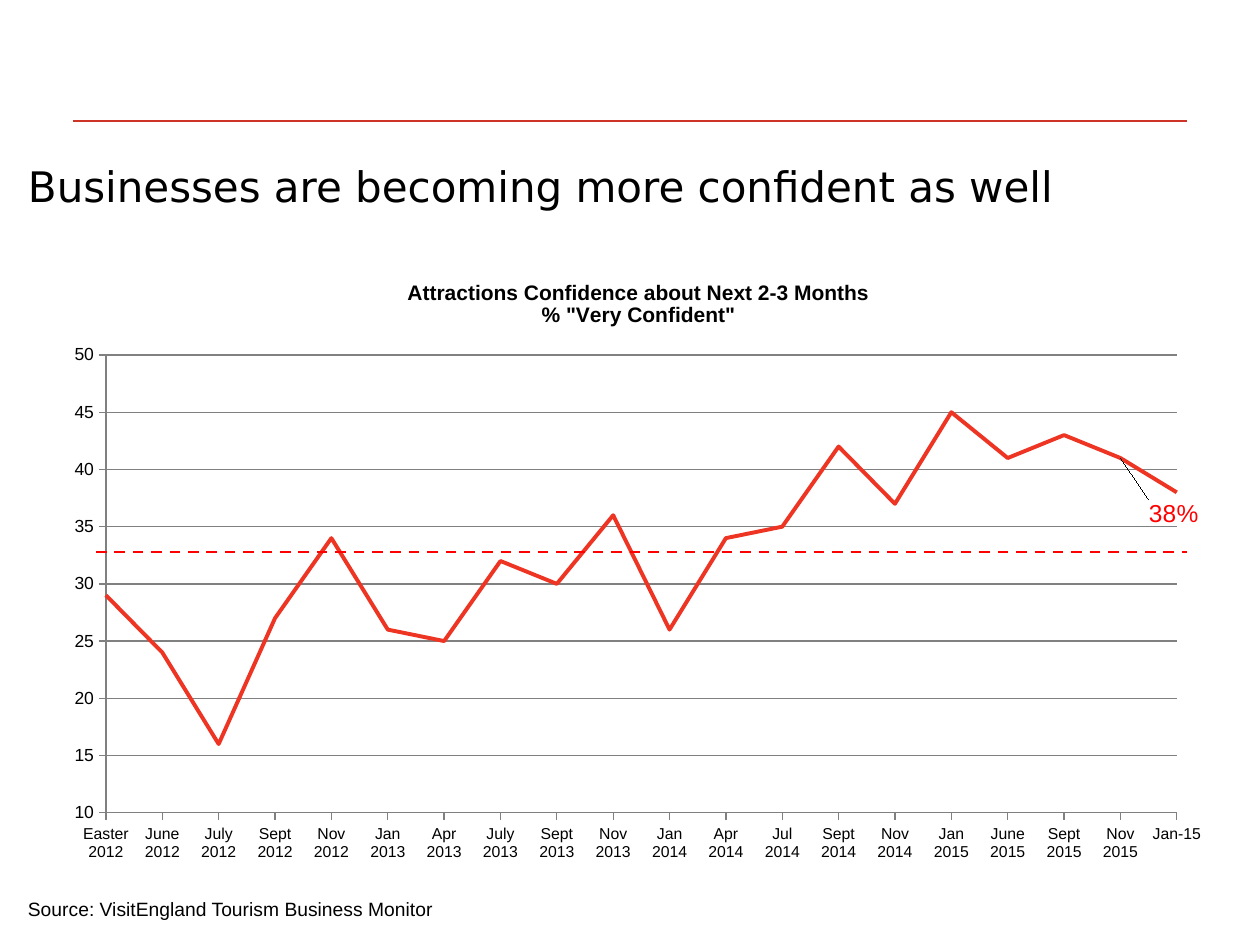
from lxml import etree
from pptx import Presentation, util as u
from pptx.chart.data import CategoryChartData
from pptx.dml.color import RGBColor
from pptx.enum import chart as charts, dml, shapes, text
from pptx.oxml import parse_xml
from pptx.oxml.ns import nsdecls, qn

PX = 914400 / 126
BLACK = RGBColor(0, 0, 0)
RED = RGBColor(0xFF, 0, 0)
SERIES_RED = RGBColor(0xEE, 0x35, 0x24)
RULE_RED = RGBColor(0xCD, 0x34, 0x25)
GREY = RGBColor(0x80, 0x80, 0x80)

CONFIDENCE = {
    "Easter 2012": 29, "June 2012": 24, "July 2012": 16, "Sept 2012": 27,
    "Nov 2012": 34, "Jan 2013": 26, "Apr 2013": 25, "July 2013": 32,
    "Sept 2013": 30, "Nov 2013": 36, "Jan 2014": 26, "Apr 2014": 34,
    "Jul 2014": 35, "Sept 2014": 42, "Nov 2014": 37, "Jan 2015": 45,
    "June 2015": 41, "Sept 2015": 43, "Nov 2015": 41, "Jan-15": 38,
}
LEADER_LINES = (
    f'<c:extLst {nsdecls("c")}><c:ext uri="{{CE6537A1-D6FC-4f65-9D91-7224C49458BB}}" '
    'xmlns:c15="http://schemas.microsoft.com/office/drawing/2012/chart">'
    '<c15:showLeaderLines val="1"/></c:ext></c:extLst>'
)


def px(*lengths):
    return [u.Emu(round(length * PX)) for length in lengths]


def set_font(font, size, color=BLACK, bold=False, name="Arial"):
    font.name, font.size, font.bold = name, u.Pt(size), bold
    font.color.rgb = color


def add_line(slide, left, right, y, color, width, dash=None):
    line = slide.shapes.add_connector(
        shapes.MSO_CONNECTOR.STRAIGHT, *px(left, y, right, y))
    line.line.color.rgb = color
    line.line.width = u.Pt(width)
    if dash:
        line.line.dash_style = dash
    etree.SubElement(line._element.spPr, qn("a:effectLst"))


def add_text(slide, box, words, size, name, left_inset, anchor):
    frame = slide.shapes.add_textbox(*px(*box)).text_frame
    frame.word_wrap = True
    frame.margin_left = px(left_inset)[0]
    frame.vertical_anchor = anchor
    paragraph = frame.paragraphs[0]
    paragraph.text = words
    set_font(paragraph.font, size, name=name)


def make_layout(inner=False, **fractions):
    target = '<c:layoutTarget val="inner"/>' if inner else ""
    modes = "".join(f'<c:{key}Mode val="edge"/>' for key in "xy") if inner else ""
    values = "".join(f'<c:{key} val="{value}"/>' for key, value in fractions.items())
    return parse_xml(f'<c:layout {nsdecls("c")}><c:manualLayout>{target}{modes}{values}'
                     '</c:manualLayout></c:layout>')


def style_axis(axis, size):
    set_font(axis.tick_labels.font, size)
    axis.major_tick_mark = charts.XL_TICK_MARK.OUTSIDE
    axis.minor_tick_mark = charts.XL_TICK_MARK.NONE
    axis.format.line.color.rgb = GREY
    axis.format.line.width = u.Pt(0.75)


def add_point_label(series, index, words, x, y):
    series.data_labels.show_value = False
    label = series.points[index].data_label
    label.text_frame.text = words
    set_font(label.text_frame.paragraphs[0].font, 14, RED, bold=True)
    label.position = charts.XL_LABEL_POSITION.RIGHT
    labels = series.data_labels._element
    element = labels.find(qn("c:dLbl"))
    element.find(qn("c:idx")).addnext(make_layout(x=x, y=y))
    labels.append(parse_xml(LEADER_LINES))


def add_confidence_chart(slide):
    data = CategoryChartData()
    data.categories = list(CONFIDENCE)
    data.add_series("Series 1", CONFIDENCE.values())
    chart = slide.shapes.add_chart(
        charts.XL_CHART_TYPE.LINE, *px(52, 257, 1173, 617), data).chart
    set_font(chart.font, 10)
    chart.has_legend = False
    title = chart.chart_title.text_frame
    title.text = 'Attractions Confidence about Next 2-3 Months\n% "Very Confident"'
    for paragraph in title.paragraphs:
        set_font(paragraph.font, 12, bold=True)

    plot_area = chart._chartSpace.chart.plotArea
    for old_layout in plot_area.findall(qn("c:layout")):
        plot_area.remove(old_layout)
    plot_area.insert(0, make_layout(inner=True, x=0.046, y=0.159, w=0.913, h=0.742))

    style_axis(chart.category_axis, 9)
    axis = chart.value_axis
    style_axis(axis, 10)
    axis.minimum_scale, axis.maximum_scale, axis.major_unit = 10, 50, 5
    axis.has_major_gridlines = True
    axis.major_gridlines.format.line.color.rgb = GREY
    axis.major_gridlines.format.line.width = u.Pt(0.75)
    axis._element.find(qn("c:majorUnit")).addprevious(
        parse_xml(f'<c:crossBetween {nsdecls("c")} val="midCat"/>'))

    chart.plots[0].vary_by_categories = False
    series = chart.plots[0].series[0]
    series.smooth = False
    series.marker.style = charts.XL_MARKER_STYLE.NONE
    series.format.line.color.rgb = SERIES_RED
    series.format.line.width = u.Pt(2.25)
    add_point_label(series, 18, "38%", 0.02, 0.09)


def main():
    presentation = Presentation()
    presentation.slide_width, presentation.slide_height = px(1260, 945)
    slide = presentation.slides.add_slide(presentation.slide_layouts[6])
    add_line(slide, 73, 1187, 121, RULE_RED, 0.75)
    add_confidence_chart(slide)
    add_line(slide, 96, 1187, 552, RED, 1.5, dml.MSO_LINE.DASH)
    add_text(slide, (28, 151, 1218, 69), "Businesses are becoming more confident as well",
             24, "DejaVu Sans", 0, text.MSO_ANCHOR.MIDDLE)
    add_text(slide, (15, 891, 655, 37), "Source: VisitEngland Tourism Business Monitor",
             11, "Arial", 13, text.MSO_ANCHOR.TOP)
    presentation.save("out.pptx")


if __name__ == "__main__":
    main()
